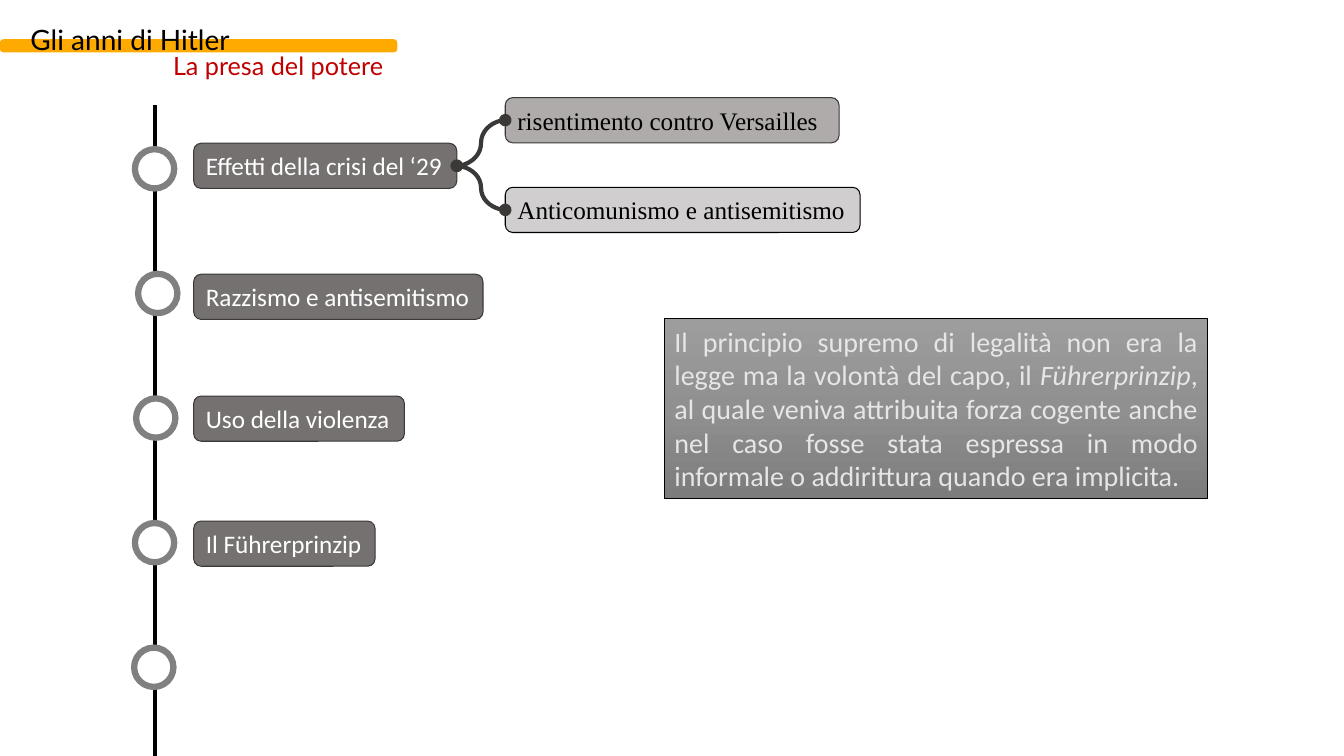
from copy import deepcopy

from lxml import etree
from pptx import Presentation
from pptx.dml.color import RGBColor
from pptx.enum.shapes import MSO_CONNECTOR, MSO_SHAPE
from pptx.enum.text import MSO_ANCHOR, MSO_AUTO_SIZE, PP_ALIGN
from pptx.oxml.ns import qn
from pptx.util import Cm, Pt

STRAIGHT, CURVE = MSO_CONNECTOR.STRAIGHT, MSO_CONNECTOR.CURVE
ROUNDED, RECT = MSO_SHAPE.ROUNDED_RECTANGLE, MSO_SHAPE.RECTANGLE
CIRCLE = MSO_SHAPE.FLOWCHART_CONNECTOR
TOP, MIDDLE = MSO_ANCHOR.TOP, MSO_ANCHOR.MIDDLE
LEFT, JUSTIFY = PP_ALIGN.LEFT, PP_ALIGN.JUSTIFY
FIT_SHAPE = MSO_AUTO_SIZE.SHAPE_TO_FIT_TEXT

BLACK = RGBColor(0x00, 0x00, 0x00)
WHITE = RGBColor(0xFF, 0xFF, 0xFF)
ORANGE = RGBColor(0xFF, 0xAA, 0x00)
RED = RGBColor(0xC0, 0x00, 0x00)
RING = RGBColor(0x80, 0x80, 0x80)
CHARCOAL = RGBColor(0x3B, 0x38, 0x38)
DARK = RGBColor(0x76, 0x71, 0x71)
MEDIUM = RGBColor(0xAF, 0xAB, 0xAB)
LIGHT = RGBColor(0xD0, 0xCE, 0xCE)
PALE = RGBColor(0xE7, 0xE6, 0xE6)
PANEL_SHADES = [
    RGBColor(0x9D, 0x9D, 0x9D),
    RGBColor(0x90, 0x90, 0x90),
    RGBColor(0x7C, 0x7C, 0x7C),
]

PILL_HEIGHT = 1.14
TOPIC_LEFT = 4.88
TOPICS = [
    ("Effetti della crisi del ‘29", 3.61, 6.63),
    ("Razzismo e antisemitismo", 6.91, 7.29),
    ("Uso della violenza", 9.98, 5.31),
    ("Il Führerprinzip", 13.13, 4.57),
]
BRANCH_LEFT = 12.73
BRANCHES = [
    ("risentimento contro Versailles", 2.46, 8.41, MEDIUM, CHARCOAL),
    ("Anticomunismo e antisemitismo", 4.72, 8.94, LIGHT, BLACK),
]
TIMELINE_X = 3.91
MARKER_LEFTS = [3.4, 3.48, 3.43, 3.4, 3.38]
MARKER_TOP, MARKER_STEP, MARKER_SIZE = 3.76, 3.14, 0.99
PANEL_RUNS = [
    ("Il principio supremo di legalità non era la legge ma la volontà del capo, il ", False),
    ("Führerprinzip", True),
    (", al quale veniva attribuita forza cogente anche nel caso fosse stata espressa "
     "in modo informale o addirittura quando era implicita.", False),
]


def set_all(target, values):
    for name, value in values.items():
        setattr(target, name, value)


def write(sp, runs, font, size, color, wrap=False, anchor=TOP, align=LEFT):
    tf = sp.text_frame
    set_all(tf, {"word_wrap": wrap, "auto_size": FIT_SHAPE, "vertical_anchor": anchor})
    p = tf.paragraphs[0]
    p.alignment = align
    for text, italic in runs:
        r = p.add_run()
        r.text = text
        set_all(r.font, {"name": font, "size": Pt(size), "italic": italic})
        r.font.color.rgb = color


def add_box(s, kind, box, fill=None, line=None, width=0.75):
    sp = s.shapes.add_shape(kind, *map(Cm, box))
    sp.shadow.inherit = False
    if fill is not None:
        sp.fill.solid()
        sp.fill.fore_color.rgb = fill
    if line is None:
        sp.line.fill.background()
    else:
        sp.line.color.rgb = line
        sp.line.width = Pt(width)
    return sp


def add_pill(s, text, left, top, width, fill, line, font, color):
    sp = add_box(s, ROUNDED, (left, top, width, PILL_HEIGHT), fill, line)
    write(sp, [(text, False)], font, 18, color, anchor=MIDDLE)
    return sp


def add_line(s, kind, color, start=(0, 0), end=(0, 0)):
    c = s.shapes.add_connector(kind, *map(Cm, start + end))
    c.line.color.rgb = color
    c.line.width = Pt(3)
    etree.SubElement(c._element.spPr, qn("a:effectLst"))
    return c


def add_branch_curve(s, topic, branch):
    c = add_line(s, CURVE, CHARCOAL)
    c.begin_connect(topic, 3)
    c.end_connect(branch, 1)
    ln = c.line._get_or_add_ln()
    for end in ("a:headEnd", "a:tailEnd"):
        etree.SubElement(ln, qn(end), type="oval")


def add_heading(s):
    bar = add_box(s, ROUNDED, (0, 0.99, 10.01, 0.33), ORANGE)
    bar.adjustments[0] = 0.27
    title = s.shapes.title
    set_all(title, {"left": Cm(0.51), "top": Cm(0.43), "width": Cm(5.74), "height": Cm(1.12)})
    write(title, [("Gli anni di Hitler", False)], "Lato", 20, BLACK)
    bar._element.addnext(title._element)
    subtitle = s.shapes.add_textbox(Cm(4.11), Cm(1.14), Cm(6.17), Cm(1.02))
    write(subtitle, [("La presa del potere", False)], "Lato", 18, RED)


def add_timeline(s):
    add_line(s, STRAIGHT, BLACK, (TIMELINE_X, 2.64), (TIMELINE_X, 19.05))
    for i, left in enumerate(MARKER_LEFTS):
        top = MARKER_TOP + i * MARKER_STEP
        add_box(s, CIRCLE, (left, top, MARKER_SIZE, MARKER_SIZE), WHITE, RING, 4.5)


def add_panel(s):
    sp = add_box(s, RECT, (16.74, 8.03, 13.69, 4.52), line=BLACK, width=0.5)
    sp.fill.gradient()
    sp.fill.gradient_angle = 270
    stops = sp._element.spPr.find(qn("a:gradFill")).find(qn("a:gsLst"))
    stops.insert(1, deepcopy(stops[0]))
    for i, (stop, shade) in enumerate(zip(sp.fill.gradient_stops, PANEL_SHADES)):
        stop.position = i / 2
        stop.color.rgb = shade
    write(sp, PANEL_RUNS, "Calibri", 20, PALE, wrap=True, anchor=MIDDLE, align=JUSTIFY)


def main():
    prs = Presentation()
    prs.slide_width, prs.slide_height = Cm(33.86), Cm(19.05)
    s = prs.slides.add_slide(prs.slide_layouts.get_by_name("Title Only"))
    add_heading(s)
    add_timeline(s)
    topics = [
        add_pill(s, text, TOPIC_LEFT, top, width, DARK, CHARCOAL, "Calibri", WHITE)
        for text, top, width in TOPICS
    ]
    for text, top, width, fill, line in BRANCHES:
        branch = add_pill(s, text, BRANCH_LEFT, top, width, fill, line,
                          "Times New Roman", BLACK)
        add_branch_curve(s, topics[0], branch)
    add_panel(s)
    prs.save("out.pptx")


if __name__ == "__main__":
    main()
